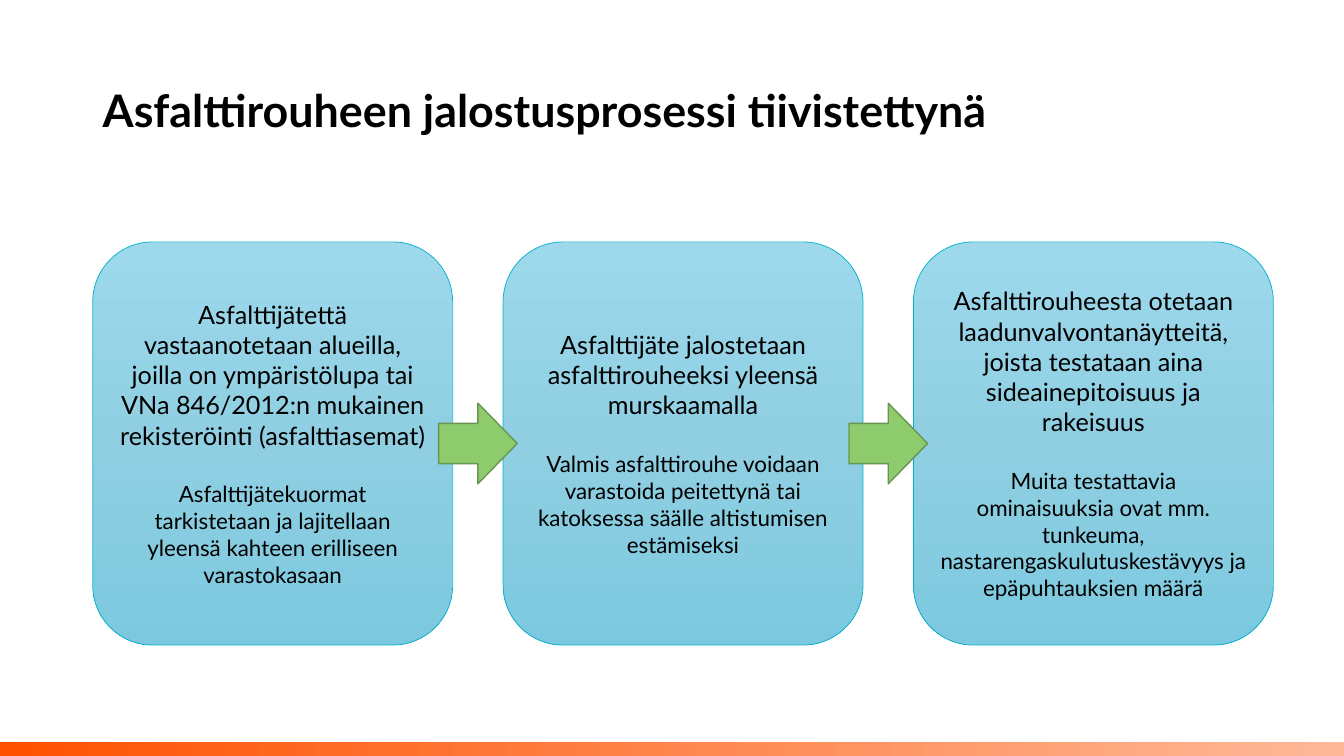
from copy import deepcopy
from dataclasses import dataclass

from pptx import Presentation
from pptx.dml.color import RGBColor
from pptx.enum import shapes, text
from pptx.oxml.ns import qn
from pptx.util import Inches, Pt


@dataclass(frozen=True)
class Theme:
    font: str = "Lato"
    ink: str = "000000"
    footer: tuple = ("FF5100", "FFB999")
    card: tuple = ("9DD8EB", "90CFE2", "7CC9DF")
    card_line: str = "00B0CC"
    arrow: str = "8DCB6D"
    arrow_line: str = "689651"
    title_size: int = 32
    step_size: int = 18
    detail_size: int = 16


THEME = Theme()
TITLE = "Asfalttirouheen jalostusprosessi tiivistettynä"
STEPS = [
    ("Asfalttijätettä vastaanotetaan alueilla, joilla on ympäristölupa tai "
     "VNa 846/2012:n mukainen rekisteröinti (asfalttiasemat)",
     "Asfalttijätekuormat tarkistetaan ja lajitellaan yleensä kahteen "
     "erilliseen varastokasaan"),
    ("Asfalttijäte jalostetaan asfalttirouheeksi yleensä murskaamalla",
     "Valmis asfalttirouhe voidaan varastoida peitettynä tai katoksessa "
     "säälle altistumisen estämiseksi"),
    ("Asfalttirouheesta otetaan laadunvalvontanäytteitä, joista testataan "
     "aina sideainepitoisuus ja rakeisuus",
     "Muita testattavia ominaisuuksia ovat mm. tunkeuma, "
     "nastarengaskulutuskestävyys ja epäpuhtauksien määrä"),
]


def fill_gradient(shape, colors, angle):
    """Spread the colours evenly; the angle is counter-clockwise."""
    shape.fill.gradient()
    shape.fill.gradient_angle = angle
    stop_list = shape._element.spPr.find(".//" + qn("a:gsLst"))
    while len(stop_list) < len(colors):
        stop_list.append(deepcopy(stop_list[-1]))
    for index, (stop, color) in enumerate(zip(shape.fill.gradient_stops, colors)):
        stop.position = index / (len(colors) - 1)
        stop.color.rgb = RGBColor.from_string(color)


def add_shape(slide, kind, box, line=None, line_width=1):
    shape = slide.shapes.add_shape(kind, *map(Inches, box))
    shape.shadow.inherit = False
    if line:
        shape.line.color.rgb = RGBColor.from_string(line)
        shape.line.width = Pt(line_width)
    else:
        shape.line.fill.background()
    return shape


def write(paragraph, content, size, bold=False):
    paragraph.text = content
    for run in paragraph.runs:
        run.font.name = THEME.font
        run.font.size = Pt(size)
        run.font.bold = bold
        run.font.color.rgb = RGBColor.from_string(THEME.ink)


def add_footer(slide, box):
    bar = add_shape(slide, shapes.MSO_SHAPE.RECTANGLE, box)
    fill_gradient(bar, THEME.footer, 0)


def add_title(slide, box):
    frame = slide.shapes.add_textbox(*map(Inches, box)).text_frame
    frame.word_wrap = True
    frame.vertical_anchor = text.MSO_ANCHOR.MIDDLE
    paragraph = frame.paragraphs[0]
    paragraph.line_spacing = 0.9
    write(paragraph, TITLE, THEME.title_size, bold=True)


def add_card(slide, box, step, detail):
    card = add_shape(slide, shapes.MSO_SHAPE.ROUNDED_RECTANGLE, box,
                     THEME.card_line, 0.5)
    fill_gradient(card, THEME.card, 270)
    frame = card.text_frame
    frame.word_wrap = True
    frame.vertical_anchor = text.MSO_ANCHOR.MIDDLE
    frame.margin_left = frame.margin_right = Inches(0.08)
    write(frame.paragraphs[0], step, THEME.step_size)
    detail_paragraph = frame.add_paragraph()
    detail_paragraph.space_before = Pt(1.2 * THEME.step_size)
    write(detail_paragraph, detail, THEME.detail_size)
    for paragraph in frame.paragraphs:
        paragraph.alignment = text.PP_ALIGN.CENTER


def add_arrow(slide, center_x, center_y, width=0.78, height=0.8):
    box = (center_x - width / 2, center_y - height / 2, width, height)
    arrow = add_shape(slide, shapes.MSO_SHAPE.RIGHT_ARROW, box, THEME.arrow_line)
    arrow.fill.solid()
    arrow.fill.fore_color.rgb = RGBColor.from_string(THEME.arrow)


def add_process(slide, box, gap=0.5):
    """Equal cards in a row, with an arrow over each gap."""
    left, top, width, height = box
    card_width = (width - gap * (len(STEPS) - 1)) / len(STEPS)
    pitch = card_width + gap
    for index, (step, detail) in enumerate(STEPS):
        add_card(slide, (left + index * pitch, top, card_width, height), step, detail)
    for index in range(1, len(STEPS)):
        add_arrow(slide, left + index * pitch - gap / 2, top + height / 2)


def main():
    presentation = Presentation()
    presentation.slide_width = Inches(13.33)
    presentation.slide_height = Inches(7.5)
    slide = presentation.slides.add_slide(presentation.slide_layouts[6])
    add_footer(slide, (0, 7.36, 13.33, 0.14))
    add_title(slide, (0.92, 0.4, 10.77, 1.45))
    add_process(slide, (0.92, 2.4, 11.71, 4))
    presentation.save("out.pptx")


if __name__ == "__main__":
    main()
